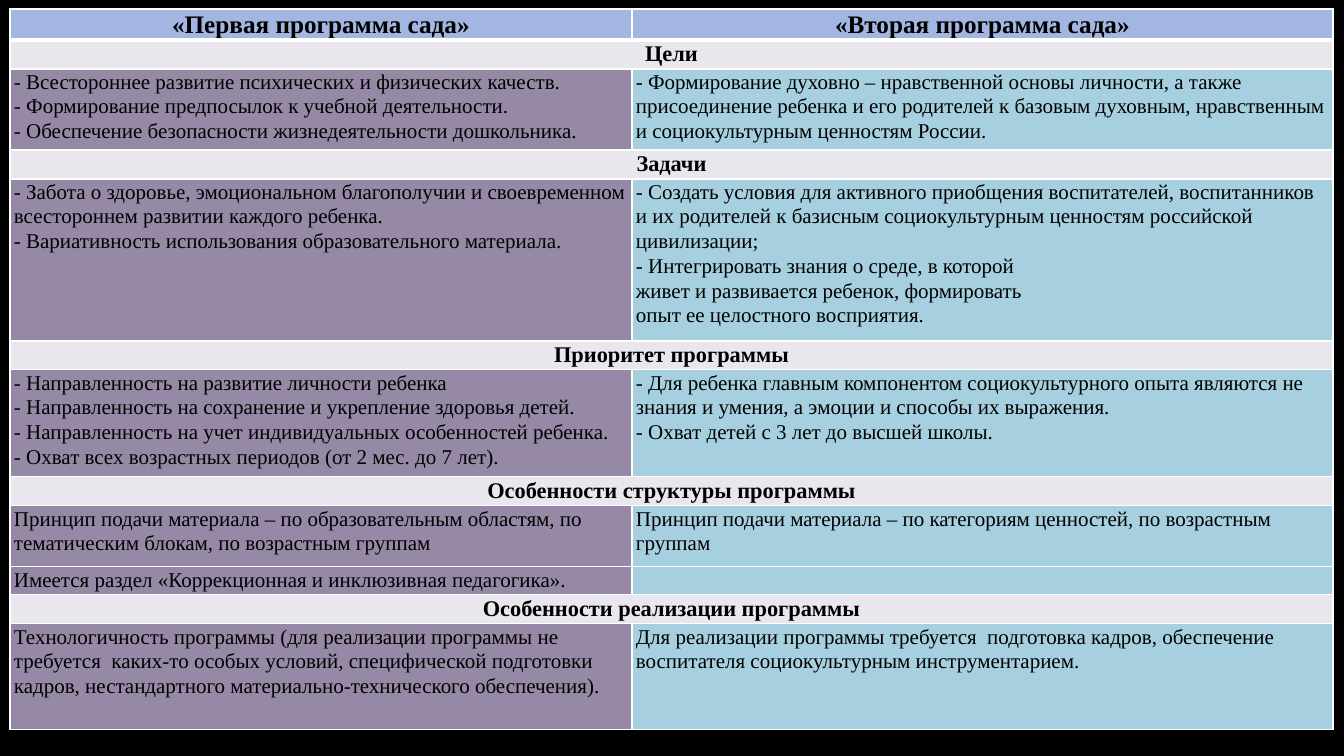
"""Build a slide with a table that compares two preschool programmes."""
from lxml.etree import SubElement
from pptx import Presentation
from pptx.dml.color import RGBColor
from pptx.enum.text import PP_ALIGN as Align
from pptx.oxml.ns import qn
from pptx.util import Pt

SCALE = 914400 / 100.8
FONT = "Times New Roman"
BLACK, WHITE = "000000", "FFFFFF"
HEADER_FILL, BAND_FILL = "A3B6E2", "E9E7ED"
COLUMN_FILLS = ["9689A6", "A6D0DF"]
HEADER_SIZE, BAND_SIZE, BODY_SIZE = 18, 16, 15
TABLE_LEFT, TABLE_TOP = 10, 9
COLUMN_WIDTHS = [622, 701]
HEADER_HEIGHT, BAND_HEIGHT = 31, 29

HEADERS = ["«Первая программа сада»", "«Вторая программа сада»"]
SECTIONS = [
    ("Цели", [
        (81, [
            "- Всестороннее развитие психических и физических качеств.",
            "- Формирование предпосылок к учебной деятельности.",
            "- Обеспечение безопасности жизнедеятельности дошкольника.",
        ], [
            "- Формирование духовно – нравственной основы личности, а также",
            "присоединение ребенка и его родителей к базовым духовным, нравственным "
            "и социокультурным ценностям России.",
        ]),
    ]),
    ("Задачи", [
        (162, [
            "- Забота о здоровье, эмоциональном благополучии и своевременном "
            "всестороннем развитии каждого ребенка.",
            "- Вариативность использования образовательного материала.",
        ], [
            "- Создать условия для активного приобщения воспитателей, воспитанников "
            "и их родителей к базисным социокультурным ценностям российской",
            "цивилизации;",
            "- Интегрировать знания о среде, в которой",
            "живет и развивается ребенок, формировать",
            "опыт ее целостного восприятия.",
        ]),
    ]),
    ("Приоритет программы", [
        (107, [
            "- Направленность на развитие личности ребенка",
            "- Направленность на сохранение и укрепление здоровья детей.",
            "- Направленность на учет индивидуальных особенностей ребенка.",
            "- Охват всех возрастных периодов (от 2 мес. до 7 лет).",
        ], [
            "- Для ребенка главным компонентом социокультурного опыта являются не "
            "знания и умения, а эмоции и способы их выражения.",
            "- Охват детей с 3 лет до высшей школы.",
        ]),
    ]),
    ("Особенности структуры программы", [
        (61, [
            "Принцип подачи материала – по образовательным областям, по "
            "тематическим блокам, по возрастным группам",
        ], [
            "Принцип подачи материала – по категориям ценностей, по возрастным группам",
        ]),
        (28, ["Имеется раздел «Коррекционная и инклюзивная педагогика»."], []),
    ]),
    ("Особенности реализации программы", [
        (106, [
            "Технологичность программы (для реализации программы не требуется  "
            "каких-то особых условий, специфической подготовки кадров, "
            "нестандартного материально-технического обеспечения).",
        ], [
            "Для реализации программы требуется  подготовка кадров, обеспечение "
            "воспитателя социокультурным инструментарием.",
        ]),
    ]),
]


def px(length):
    return round(length * SCALE)


def color(value):
    return RGBColor.from_string(value)


def set_borders(cell, top, bottom):
    properties = cell._tc.get_or_add_tcPr()
    for side, width in (("L", 1), ("R", 1), ("T", top), ("B", bottom)):
        line = SubElement(properties, qn(f"a:ln{side}"), w=str(Pt(width)))
        fill = SubElement(line, qn("a:solidFill"))
        SubElement(fill, qn("a:srgbClr"), val=WHITE)


def fill_cell(cell, lines, fill, size, heading=False, top=1, bottom=1):
    set_borders(cell, top, bottom)
    cell.fill.solid()
    cell.fill.fore_color.rgb = color(fill)
    cell.margin_left = cell.margin_right = px(4)
    cell.margin_top = cell.margin_bottom = 0
    cell.text_frame.text = "\n".join(lines)
    for para in cell.text_frame.paragraphs:
        para.alignment = Align.CENTER if heading else Align.LEFT
        para.line_spacing = 1.07
        for span in para.runs:
            span.font.name = FONT
            span.font.size = Pt(size)
            span.font.bold = heading
            span.font.color.rgb = color(BLACK)
        if not para.runs:
            SubElement(para._p, qn("a:endParaRPr"), sz=str(size * 100))


def main():
    deck = Presentation()
    deck.slide_width, deck.slide_height = px(1344), px(756)
    page = deck.slides.add_slide(deck.slide_layouts[6])
    page.background.fill.solid()
    page.background.fill.fore_color.rgb = color(BLACK)

    heights = [HEADER_HEIGHT]
    for _, rows in SECTIONS:
        heights += [BAND_HEIGHT] + [row[0] for row in rows]
    table = page.shapes.add_table(
        len(heights), len(COLUMN_WIDTHS), px(TABLE_LEFT), px(TABLE_TOP),
        px(sum(COLUMN_WIDTHS)), px(sum(heights))).table
    for column, width in zip(table.columns, COLUMN_WIDTHS):
        column.width = px(width)
    for row, height in zip(table.rows, heights):
        row.height = px(height)

    for index, header in enumerate(HEADERS):
        fill_cell(table.cell(0, index), [header], HEADER_FILL, HEADER_SIZE, True, bottom=3)
    position = 1
    for title, rows in SECTIONS:
        band = table.cell(position, 0)
        band.merge(table.cell(position, 1))
        fill_cell(band, [title], BAND_FILL, BAND_SIZE, True, top=3 if position == 1 else 1)
        for offset, (_, *texts) in enumerate(rows, 1):
            for index, lines in enumerate(texts):
                fill_cell(table.cell(position + offset, index), lines,
                          COLUMN_FILLS[index], BODY_SIZE)
        position += 1 + len(rows)
    deck.save("out.pptx")


if __name__ == "__main__":
    main()
